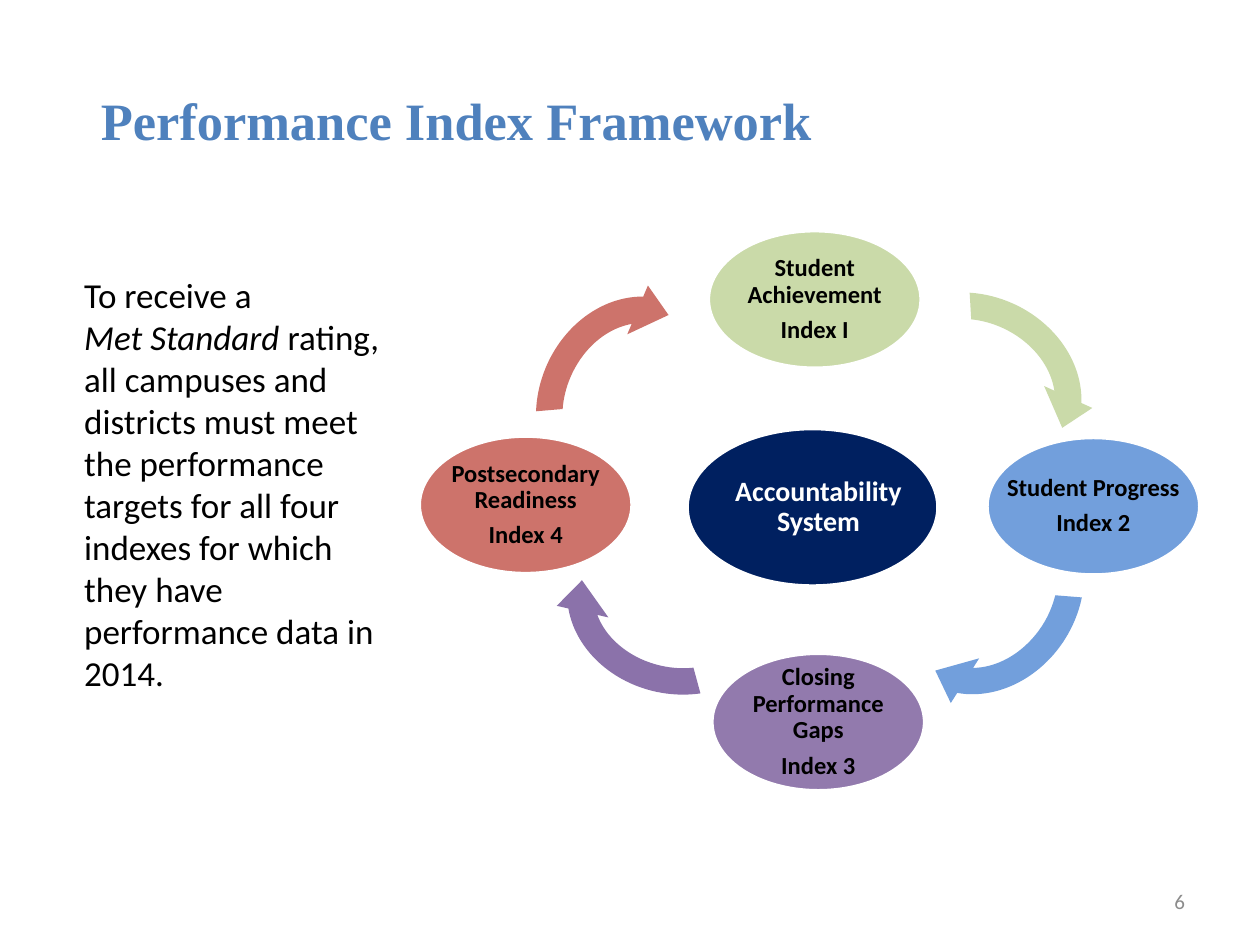
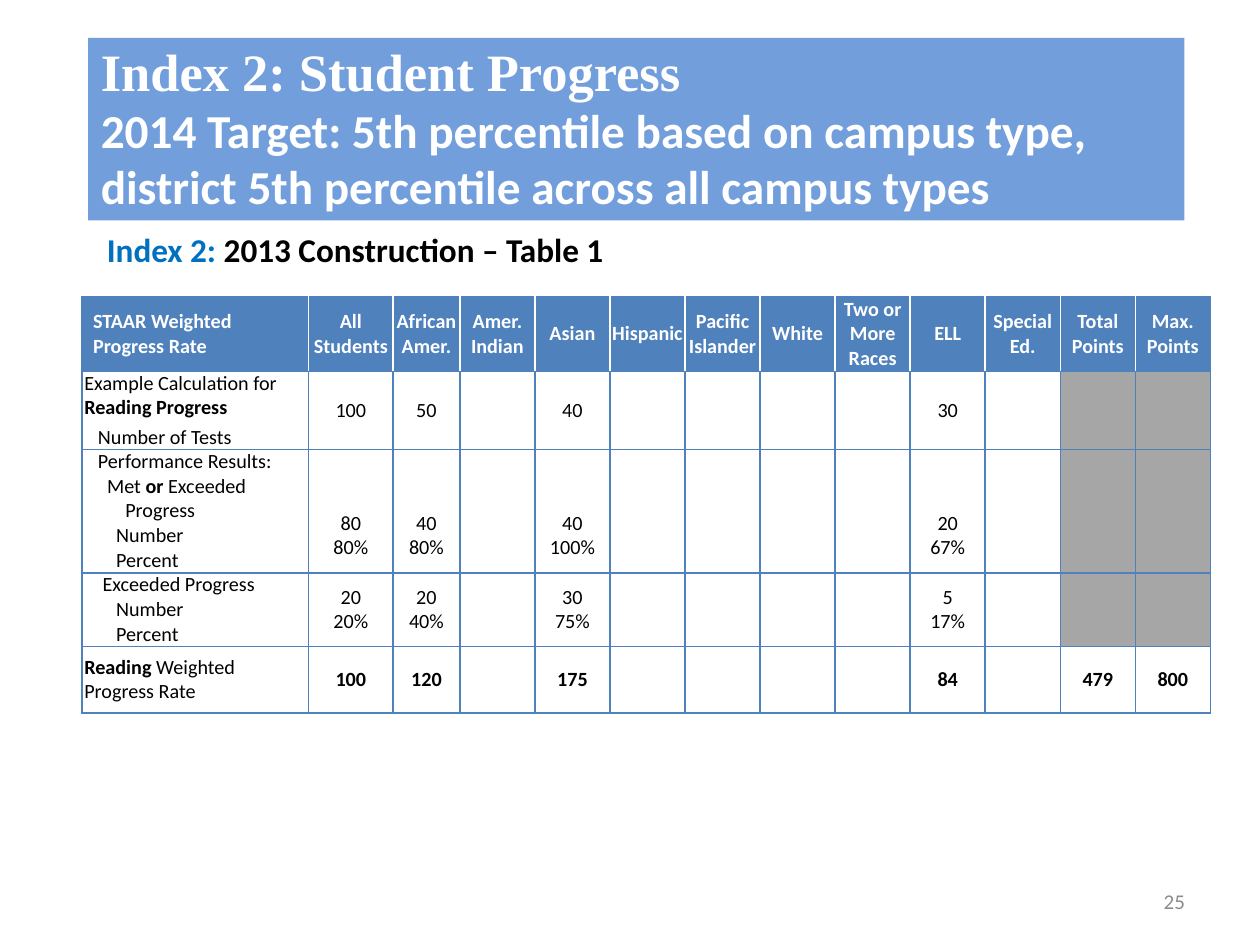
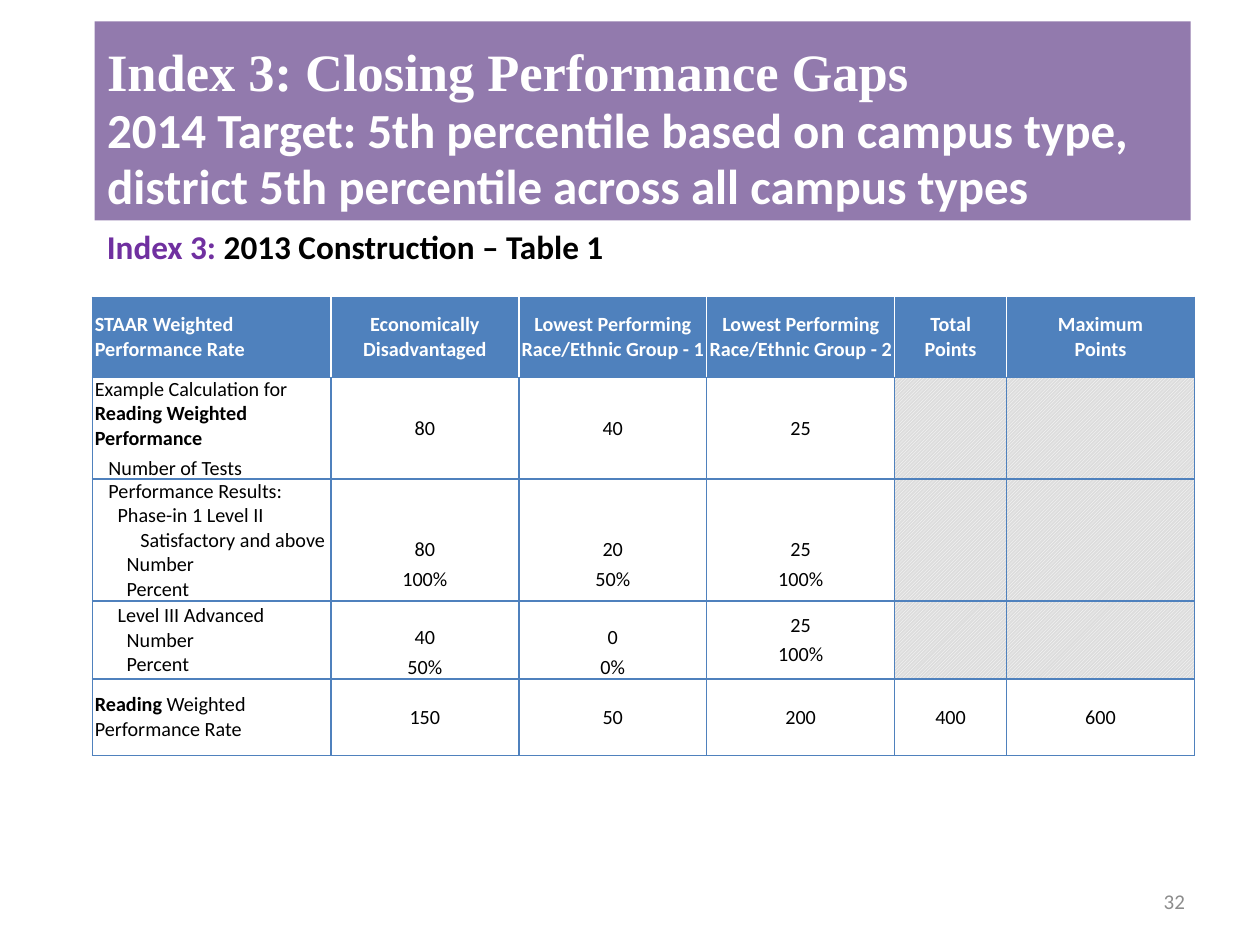
from lxml.etree import SubElement
from pptx import Presentation
from pptx.dml.color import RGBColor
from pptx.enum.dml import MSO_PATTERN
from pptx.enum.shapes import MSO_SHAPE
from pptx.enum.text import MSO_ANCHOR, MSO_AUTO_SIZE, PP_ALIGN
from pptx.oxml.ns import qn
from pptx.util import Pt

BLACK = RGBColor(0, 0, 0)
WHITE = RGBColor(0xFF, 0xFF, 0xFF)
PAGE_GRAY = RGBColor(0x8C, 0x8C, 0x8C)
TABLE_BLUE = RGBColor(0x4F, 0x81, 0xBD)
NAVY = RGBColor(0x00, 0x20, 0x60)
GREEN = RGBColor(0xCA, 0xDA, 0xA9)
BLUE = RGBColor(0x72, 0x9F, 0xDC)
PURPLE = RGBColor(0x92, 0x7A, 0xAD)
ARROW_PURPLE = RGBColor(0x8B, 0x72, 0xAA)
RED = RGBColor(0xCD, 0x73, 0x6B)
INDEX_BLUE = RGBColor(0x00, 0x70, 0xC0)
INDEX_PURPLE = RGBColor(0x70, 0x30, 0xA0)
SHADE_GRAY = RGBColor(0xA6, 0xA6, 0xA6)
HATCH_GRAY = RGBColor(0xDD, 0xDD, 0xDD)

BODY_FONT, TITLE_FONT = "Calibri", "Times New Roman"
ARROW_ADJUSTMENTS = (1 / 8, 11.42, 204.58, 145.35, 1 / 8)
BOLD = {"bold": True}
SHADED = None
TARGET = ("2014 Target: 5th percentile based on campus type, "
          "district 5th percentile across all campus types")


def apply(target, values):
    for name, value in values.items():
        setattr(target, name, value)


def style_font(font, values):
    values = dict(values)
    color = values.pop("color", None)
    if color is not None:
        font.color.rgb = color
    apply(font, values)


def write(frame, paragraphs, font, layout=None, **frame_values):
    """Fill a frame; a paragraph is a string or a list of (text, font changes)."""
    apply(frame, {"word_wrap": True, **frame_values})
    for number, spans in enumerate(paragraphs):
        para = frame.paragraphs[0] if number == 0 else frame.add_paragraph()
        apply(para, layout or {})
        for text, changes in [(spans, {})] if isinstance(spans, str) else spans:
            span = para.add_run()
            span.text = text
            style_font(span.font, {"name": BODY_FONT, **font, **changes})


def margins(side, top=0, bottom=0):
    return {"margin_left": Pt(side), "margin_right": Pt(side),
            "margin_top": Pt(top), "margin_bottom": Pt(bottom)}


def border(cell, **colors):
    """Draw one-point borders, which must precede the fill in the cell's XML."""
    properties = cell._tc.get_or_add_tcPr()
    for position, side in enumerate(("L", "R", "T", "B")):
        line = SubElement(properties, qn(f"a:ln{side}"), w=str(Pt(1)))
        fill = SubElement(line, qn("a:solidFill"))
        SubElement(fill, qn("a:srgbClr"), val=str(colors.get(side, TABLE_BLUE)))
        properties.insert(position, line)


def shade_solid(fill):
    fill.solid()
    fill.fore_color.rgb = SHADE_GRAY


def shade_hatched(fill):
    fill.patterned()
    fill.pattern = MSO_PATTERN.LIGHT_UPWARD_DIAGONAL
    fill.fore_color.rgb = WHITE
    fill.back_color.rgb = HATCH_GRAY


class IndexDeck:
    def __init__(self):
        self.deck = Presentation()
        apply(self.deck, {"slide_width": Pt(720), "slide_height": Pt(540)})
        self.page = None

    def new_page(self, number):
        self.page = self.deck.slides.add_slide(self.deck.slide_layouts[5])
        self.text((516.2, 500.4, 168, 28.8), [str(number)],
                  {"size": Pt(12), "color": PAGE_GRAY},
                  {"alignment": PP_ALIGN.RIGHT}, vertical_anchor=MSO_ANCHOR.MIDDLE)

    def title(self, box, text, color, band=None, subtitle=None, subtitle_size=None):
        title = self.page.shapes.title
        apply(title, dict(zip(("left", "top", "width", "height"), map(Pt, box))))
        if band is not None:
            title.fill.solid()
            title.fill.fore_color.rgb = band
        write(title.text_frame, [[(text, {"name": TITLE_FONT, "size": Pt(30)})]],
              {"bold": True, "color": color},
              {"alignment": PP_ALIGN.LEFT, "line_spacing": Pt(32)},
              vertical_anchor=MSO_ANCHOR.BOTTOM, auto_size=MSO_AUTO_SIZE.NONE)
        if subtitle:
            para = title.text_frame.paragraphs[0]
            para.add_line_break()
            span = para.add_run()
            span.text = subtitle
            style_font(span.font, {"name": BODY_FONT, "size": Pt(subtitle_size),
                                   "bold": True, "color": color})

    def text(self, box, paragraphs, font, layout=None, **frame_values):
        shape = self.page.shapes.add_textbox(*map(Pt, box))
        write(shape.text_frame, paragraphs, font, layout, **frame_values)

    def subheading(self, index, color, layout=None):
        self.text((54, 126, 640, 30), [[(index, {"color": color}),
                                        ("2013 Construction – Table 1", {})]],
                  {"size": Pt(19), "bold": True, "color": BLACK}, layout)

    def shape(self, kind, box, color):
        shape = self.page.shapes.add_shape(kind, *map(Pt, box))
        shape.shadow.inherit = False
        shape.fill.solid()
        shape.fill.fore_color.rgb = color
        shape.line.fill.background()
        return shape

    def node(self, box, color, lines, label_width, size=14, text_color=BLACK, shift=0):
        """Draw an ellipse with a label centred on it, moved right by shift."""
        left, top, width, height = box
        oval = self.shape(MSO_SHAPE.OVAL, box, color)
        oval.line.color.rgb = WHITE
        oval.line.width = Pt(2)
        label_height = height * 0.71
        self.text((left + (width - label_width) / 2 + shift,
                   top + (height - label_height) / 2, label_width, label_height),
                  lines, {"size": Pt(size), "bold": True, "color": text_color},
                  {"alignment": PP_ALIGN.CENTER, "line_spacing": 0.9,
                   "space_after": Pt(4.9)},
                  vertical_anchor=MSO_ANCHOR.MIDDLE, **margins(1.4, 1.4, 1.4))

    def arrow(self, left, top, rotation, color):
        arrow = self.shape(MSO_SHAPE.CIRCULAR_ARROW, (left, top, 139.7, 121), color)
        arrow.rotation = rotation
        for number, value in enumerate(ARROW_ADJUSTMENTS):
            arrow.adjustments[number] = value

    def table(self, left, top, widths, heights, headers, rows, shade,
              header_indent=0, number_gap=0, last_row_bold=False):
        """Rows are (label paragraphs, space above the numbers, numbers)."""
        table = self.page.shapes.add_table(
            len(heights), len(widths), Pt(left), Pt(top),
            Pt(sum(widths)), Pt(sum(heights))).table
        apply(table, {"first_row": False, "horz_banding": False})
        for column, width in zip(table.columns, widths):
            column.width = Pt(width)
        for row, height in zip(table.rows, heights):
            row.height = Pt(height)
        last = len(headers) - 1
        for number, header in enumerate(headers):
            self.header_cell(table.cell(0, number), header, number, last, header_indent)
        for row_number, (label, space, values) in enumerate(rows, 1):
            self.label_cell(table.cell(row_number, 0), label)
            bold = last_row_bold and row_number == len(rows)
            for number, value in enumerate(values, 1):
                cell = table.cell(row_number, number)
                self.number_cell(cell, value, space, number_gap, bold, shade)

    def header_cell(self, cell, text, number, last, indent):
        cell.fill.solid()
        cell.fill.fore_color.rgb = TABLE_BLUE
        border(cell, L=TABLE_BLUE if number == 0 else WHITE,
               R=TABLE_BLUE if number == last else WHITE)
        apply(cell, {"vertical_anchor": MSO_ANCHOR.MIDDLE,
                     **margins(0 if number else 1.4)})
        write(cell.text_frame, text.split("\n"),
              {"size": Pt(11.5), "bold": True, "color": WHITE},
              {"alignment": PP_ALIGN.CENTER if number else PP_ALIGN.LEFT})
        if number == 0:
            cell.margin_left = Pt(1.4 + indent)

    def label_cell(self, cell, label):
        cell.fill.background()
        border(cell)
        apply(cell, {"vertical_anchor": MSO_ANCHOR.MIDDLE, **margins(1.4)})
        write(cell.text_frame, [spans for indent, space, spans in label],
              {"size": Pt(11.5), "bold": False, "color": BLACK})
        for para, (indent, space, spans) in zip(cell.text_frame.paragraphs, label):
            para.space_before = Pt(space)
            para._p.get_or_add_pPr().set("marL", str(Pt(indent)))

    def number_cell(self, cell, value, space, gap, bold, shade):
        if value is SHADED:
            shade(cell.fill)
        else:
            cell.fill.background()
        border(cell)
        apply(cell, {"vertical_anchor": MSO_ANCHOR.MIDDLE, **margins(1.4, space)})
        if value:
            write(cell.text_frame, value.split("\n"),
                  {"size": Pt(11.5), "bold": bold, "color": BLACK},
                  {"alignment": PP_ALIGN.CENTER})
            for para in cell.text_frame.paragraphs[1:]:
                para.space_before = Pt(gap)


COUNTS = [(18.2, 0, "Number"), (18.2, 0, "Percent")]


def example_label(subject):
    return [(0, 0, [("Example Calculation for ", {}), (subject, BOLD)]),
            (7.8, 3, "Number of Tests")]


def results_label(first_line, second_line, second_indent):
    return [(7.8, 0, "Performance Results:"), (13, 0, first_line),
            (second_indent, 0, second_line), *COUNTS]


def rate_label(rate):
    return [(0, 0, [("Reading", BOLD), (f" Weighted {rate} Rate", {})])]


def group_values(all_students, african, asian, ell, total=SHADED, maximum=SHADED):
    return [all_students, african, "", asian, *[""] * 4, ell, "", total, maximum]


def add_framework(deck):
    deck.new_page(6)
    deck.title((50.4, 21.6, 651.6, 68.4), "Performance Index Framework", TABLE_BLUE)
    deck.text((41, 152.6, 186.5, 250),
              ["To receive a",
               [("Met Standard ", {"italic": True}),
                ("rating, all campuses and districts must meet the performance targets "
                 "for all four indexes for which they have performance data in 2014.", {})]],
              {"size": Pt(20), "color": BLACK})
    for left, top, color, lines, label_width in (
            (404.8, 131.8, GREEN, ["Student Achievement", "Index I"], 86.4),
            (564, 250, BLUE, ["Student Progress", "Index 2"], 108.7),
            (406.8, 373.3, PURPLE, ["Closing Performance Gaps", "Index 3"], 87),
            (239.6, 249.2, RED, ["Postsecondary Readiness", "Index 4"], 90)):
        deck.node((left, top, 121.6, 78.6), color, lines, label_width)
    for arrow in ((487.4, 161.3, 24.5, GREEN), (493.9, 276.5, 122.4, BLUE),
                  (316.1, 283, 192.6, ARROW_PURPLE), (290.9, 169.9, 292.9, RED)):
        deck.arrow(*arrow)
    deck.node((392.6, 244.9, 143.4, 90), NAVY, ["Accountability System"], 106.6,
              size=16, text_color=WHITE, shift=3.4)


def add_student_progress(deck):
    deck.new_page(25)
    deck.title((50.4, 21.6, 626.4, 104.4), "Index 2: Student Progress", WHITE,
               BLUE, TARGET, 27)
    deck.subheading("Index 2: ", INDEX_BLUE, {"line_spacing": Pt(24)})
    deck.table(
        46.8, 169.6, [129.6, 48.2, 38.2] + [42.9] * 10, [42.6, 44.6, 70.6, 42, 38.2],
        ["STAAR Weighted Progress Rate", "All\nStudents", "African Amer.",
         "Amer. Indian", "Asian", "Hispanic", "Pacific Islander", "White",
         "Two or More\nRaces", "ELL", "Special Ed.", "Total Points", "Max.\nPoints"],
        [(example_label("Reading Progress"), 0, group_values("100", "50", "40", "30")),
         (results_label([("Met ", {}), ("or ", BOLD), ("Exceeded", {})],
                        "Progress", 23.4), 28,
          group_values("80\n80%", "40\n80%", "40\n100%", "20\n67%")),
         ([(10.4, 0, "Exceeded Progress"), *COUNTS], 0,
          group_values("20\n20%", "20\n40%", "30\n75%", "5\n17%")),
         (rate_label("Progress"), 0,
          group_values("100", "120", "175", "84", "479", "800"))],
        shade_solid, header_indent=5, last_row_bold=True)


def add_performance_gaps(deck):
    deck.new_page(32)
    deck.title((54, 12.2, 626.4, 113.8), "Index 3: Closing Performance Gaps", WHITE,
               PURPLE, TARGET, 28)
    deck.subheading("Index 3: ", INDEX_PURPLE)
    deck.table(
        52.8, 170, [136.3, 107.4, 107.4, 107.4, 64, 107.4],
        [45.6, 57.8, 69.7, 44.6, 43.6],
        ["STAAR Weighted Performance Rate", "Economically Disadvantaged",
         "Lowest Performing Race/Ethnic Group - 1",
         "Lowest Performing Race/Ethnic Group - 2", "Total\nPoints", "Maximum\nPoints"],
        [(example_label("Reading Weighted Performance"), 0,
          ["80", "40", "25", SHADED, SHADED]),
         (results_label("Phase-in 1 Level II", "Satisfactory and above", 26), 28,
          ["80\n100%", "20\n50%", "25\n100%", SHADED, SHADED]),
         ([(13, 0, "Level III Advanced"), *COUNTS], 14,
          ["40\n50%", "0\n0%", "25\n100%", SHADED, SHADED]),
         (rate_label("Performance"), 0, ["150", "50", "200", "400", "600"])],
        shade_hatched, number_gap=3)
    table = deck.page.shapes[-1].table
    table.cell(3, 3).margin_top = Pt(0)


def main():
    deck = IndexDeck()
    add_framework(deck)
    add_student_progress(deck)
    add_performance_gaps(deck)
    deck.deck.save("out.pptx")


if __name__ == "__main__":
    main()
